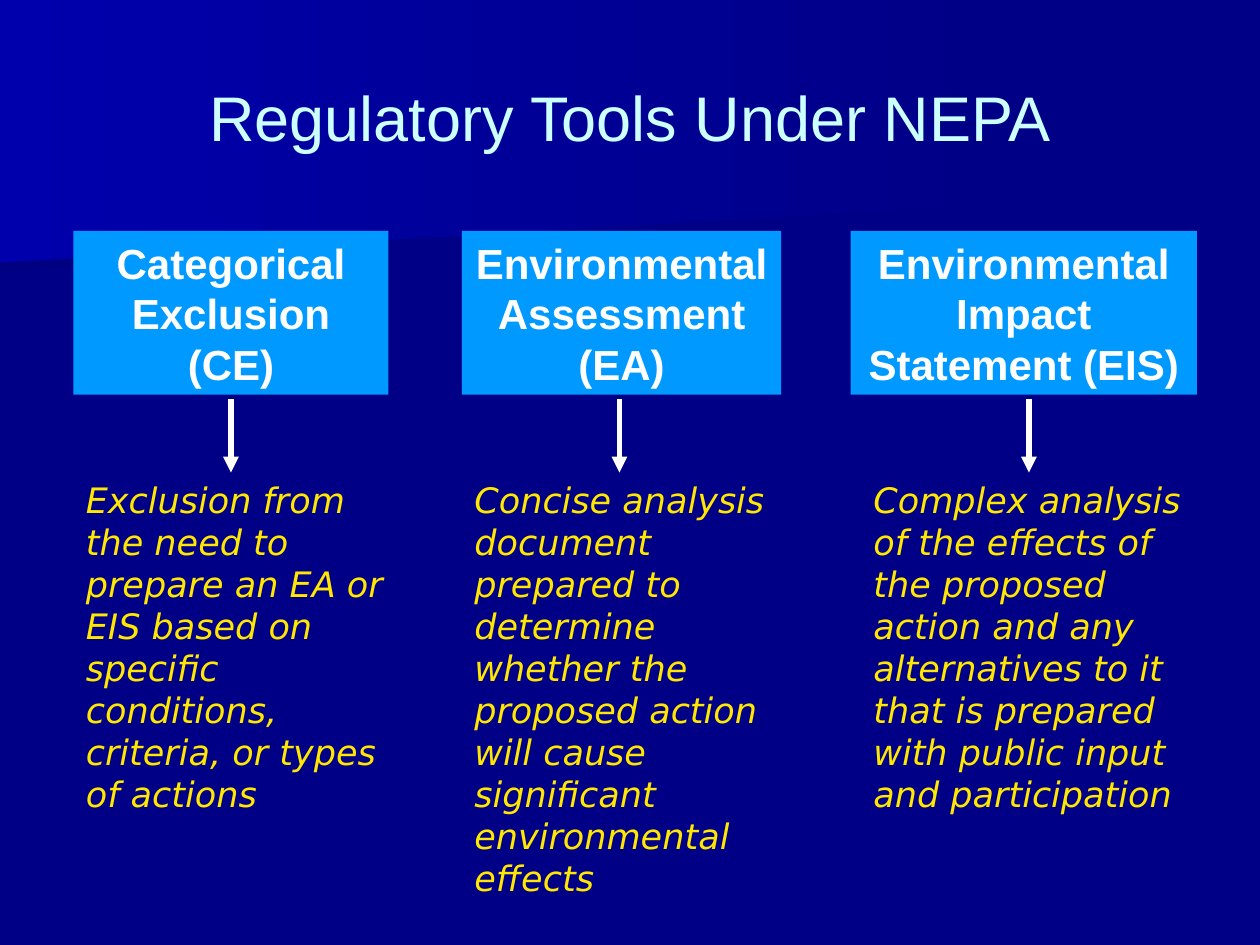
from dataclasses import dataclass

from lxml.etree import SubElement
from pptx import Presentation
from pptx.dml.color import RGBColor
from pptx.enum.shapes import MSO_CONNECTOR as Connector, MSO_SHAPE as Shape
from pptx.enum.text import MSO_ANCHOR as Anchor, PP_ALIGN as Align
from pptx.oxml.ns import qn
from pptx.util import Inches, Pt

SLIDE_WIDTH, SLIDE_HEIGHT = Inches(10), Inches(7.5)
COLUMN, ROW = SLIDE_WIDTH / 120, SLIDE_HEIGHT / 90


@dataclass(frozen=True)
class Theme:
    """Colours, fonts and type sizes of the slide."""
    background: str = "000086"
    band_shade: str = "000083"
    band_glow: str = "0000AC"
    heading_fill: str = "0099FF"
    white: str = "FFFFFF"
    title_color: str = "CCFFFF"
    detail_color: str = "FFE701"
    heading_font: str = "Arial"
    detail_font: str = "DejaVu Sans"
    title_size: int = 36
    heading_size: int = 24
    detail_size: int = 20
    arrow_width: int = 3


@dataclass(frozen=True)
class Tool:
    """A regulatory tool, with its place in grid columns."""
    heading: str
    detail: str
    left: float
    width: float
    arrow: float
    detail_left: float
    detail_width: float


THEME = Theme()
TITLE_BOX = (6, 3.6, 108, 15)
HEADING_TOP, HEADING_HEIGHT = 22, 15.6
ARROW_TOP, DETAIL_TOP, DETAIL_HEIGHT = 38, 45, 41
BANDS = [
    (THEME.band_shade, [(93.4, 18.4), (0, 26), (0, 12.1), (93.5, 12.1)]),
    (THEME.band_glow, [(95, 19.4), (0, 25), (0, 0), (95, 0)]),
]
TOOLS = [
    Tool("Environmental Impact Statement (EIS)",
         "Complex analysis of the effects of the proposed action and any "
         "alternatives to it that is prepared with public input and participation",
         81, 33, 98, 82, 33),
    Tool("Environmental Assessment (EA)",
         "Concise analysis document prepared to determine whether the proposed "
         "action will cause significant environmental effects",
         44, 30.4, 59, 44, 32),
    Tool("Categorical\nExclusion\n(CE)",
         "Exclusion from the need to prepare an EA or EIS based on specific "
         "conditions, criteria, or types of actions",
         7, 30, 22, 7, 31),
]


def rgb(code):
    """Return the colour of a hex code."""
    return RGBColor.from_string(code)


def grid(*lengths):
    """Turn alternating columns and rows into slide lengths."""
    return [round(length * (ROW if i % 2 else COLUMN)) for i, length in enumerate(lengths)]


def write(frame, text, face, size, color, align=Align.LEFT, bold=False, italic=False):
    """Fill a text frame with evenly formatted paragraphs."""
    frame.word_wrap = True
    frame.text = text
    for paragraph in frame.paragraphs:
        paragraph.alignment = align
        font = paragraph.font
        font.name, font.size, font.color.rgb = face, Pt(size), rgb(color)
        font.bold, font.italic = bold, italic


def add_band(slide, glow, corners):
    """Draw a background band that fades to the right."""
    points = [tuple(grid(*corner)) for corner in corners]
    builder = slide.shapes.build_freeform(*points[0])
    builder.add_line_segments(points[1:], close=True)
    band = builder.convert_to_shape()
    band.shadow.inherit = False
    band.line.fill.background()
    band.fill.gradient()
    band.fill.gradient_angle = 0
    for stop, color in zip(band.fill.gradient_stops, (glow, THEME.background)):
        stop.color.rgb = rgb(color)


def add_title(slide, box):
    """Place the title in front of the bands."""
    title = slide.shapes.title
    slide.shapes._spTree.append(title._element)
    title.left, title.top, title.width, title.height = grid(*box)
    title.text_frame.vertical_anchor = Anchor.MIDDLE
    write(title.text_frame, "Regulatory Tools Under NEPA", THEME.heading_font,
          THEME.title_size, THEME.title_color, Align.CENTER)


def add_heading(slide, text, box):
    """Draw the box that names a tool."""
    heading = slide.shapes.add_shape(Shape.RECTANGLE, *grid(*box))
    heading.shadow.inherit = False
    heading.fill.solid()
    heading.fill.fore_color.rgb = rgb(THEME.heading_fill)
    heading.line.fill.background()
    heading.text_frame.vertical_anchor = Anchor.MIDDLE
    write(heading.text_frame, text, THEME.heading_font, THEME.heading_size,
          THEME.white, Align.CENTER, bold=True)


def add_arrow(slide, column, top, bottom):
    """Draw a downward arrow from a heading to its detail."""
    arrow = slide.shapes.add_connector(
        Connector.STRAIGHT, *grid(column, top, column, bottom))
    arrow.line.color.rgb = rgb(THEME.white)
    arrow.line.width = Pt(THEME.arrow_width)
    SubElement(arrow.line._get_or_add_ln(), qn("a:tailEnd"), type="triangle")
    SubElement(arrow._element.spPr, qn("a:effectLst"))


def add_detail(slide, text, box):
    """Write the description of a tool."""
    detail = slide.shapes.add_textbox(*grid(*box))
    write(detail.text_frame, text, THEME.detail_font, THEME.detail_size,
          THEME.detail_color, italic=True)


def add_tool(slide, tool):
    """Build one column: heading, arrow and detail."""
    add_heading(slide, tool.heading, (tool.left, HEADING_TOP, tool.width, HEADING_HEIGHT))
    add_detail(slide, tool.detail,
               (tool.detail_left, DETAIL_TOP, tool.detail_width, DETAIL_HEIGHT))
    add_arrow(slide, tool.arrow, ARROW_TOP, DETAIL_TOP)


def main():
    """Build and save the slide."""
    deck = Presentation()
    deck.slide_width, deck.slide_height = SLIDE_WIDTH, SLIDE_HEIGHT
    slide = deck.slides.add_slide(deck.slide_layouts.get_by_name("Title Only"))
    slide.background.fill.solid()
    slide.background.fill.fore_color.rgb = rgb(THEME.background)
    for glow, corners in BANDS:
        add_band(slide, glow, corners)
    for tool in TOOLS:
        add_tool(slide, tool)
    add_title(slide, TITLE_BOX)
    deck.save("out.pptx")


if __name__ == "__main__":
    main()
